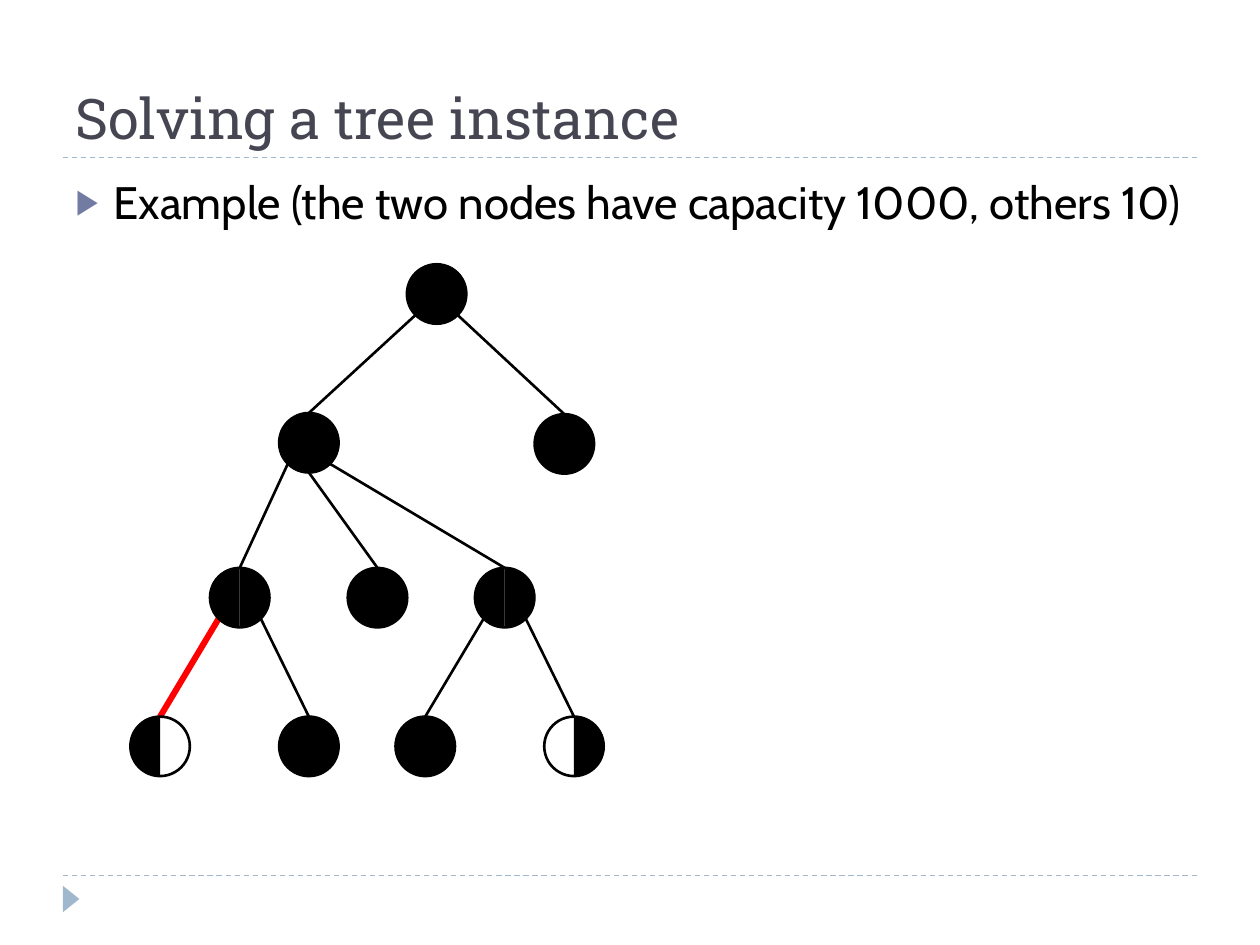
from math import sqrt

from lxml import etree
from pptx import Presentation
from pptx.dml.color import RGBColor
from pptx.enum.dml import MSO_LINE
from pptx.enum.shapes import MSO_CONNECTOR, MSO_SHAPE
from pptx.enum.text import MSO_ANCHOR, MSO_AUTO_SIZE, PP_ALIGN
from pptx.oxml.ns import qn
from pptx.util import Pt

BLACK = RGBColor(0x00, 0x00, 0x00)
RED = RGBColor(0xFF, 0x00, 0x00)
SLATE = RGBColor(0x46, 0x46, 0x53)
INDIGO = RGBColor(0x72, 0x7C, 0xA3)
PALE_BLUE = RGBColor(0x9F, 0xB8, 0xCD)

DIAMETER = 34
RADIUS = DIAMETER / 2
DIAGONAL = RADIUS / sqrt(2)

prs = Presentation()
prs.slide_width, prs.slide_height = Pt(720), Pt(540)
slide = prs.slides.add_slide(prs.slide_layouts[1])


def add_line(start, end, color, width):
    line = slide.shapes.add_connector(
        MSO_CONNECTOR.STRAIGHT, *[Pt(v) for v in (*start, *end)])
    line.line.color.rgb = color
    line.line.width = Pt(width)
    etree.SubElement(line._element.spPr, qn("a:effectLst"))
    return line


def add_solid(preset, left, top, width, height, fill=None, outline=0):
    solid = slide.shapes.add_shape(
        preset, *[Pt(v) for v in (left, top, width, height)])
    solid.shadow.inherit = False
    if fill is None:
        solid.fill.background()
    else:
        solid.fill.solid()
        solid.fill.fore_color.rgb = fill
    if outline:
        solid.line.color.rgb = BLACK
        solid.line.width = Pt(outline)
    else:
        solid.line.fill.background()
    return solid


for rule_y in (500.4, 90):
    add_line((36, rule_y), (684, rule_y), PALE_BLUE, 0.75).line.dash_style = MSO_LINE.DASH
add_solid(MSO_SHAPE.ISOSCELES_TRIANGLE, 33.1, 509, 15.1, 9.4, PALE_BLUE).rotation = 90

heading, example = slide.shapes.title, slide.placeholders[1]
texts = [
    (heading, "Solving a tree instance", (36, 12.2, 648, 77.8), MSO_ANCHOR.BOTTOM,
     {"name": "Roboto Slab", "size": Pt(32), "bold": False}, SLATE),
    (example, "Example (the two nodes have capacity 1000, others 10)",
     (36, 95.8, 648, 388.8), MSO_ANCHOR.TOP,
     {"name": "Cabin", "size": Pt(26), "bold": False}, BLACK),
]
for holder, wording, box, anchor, font_format, color in texts:
    for side, value in zip(("left", "top", "width", "height"), box):
        setattr(holder, side, Pt(value))
    frame = holder.text_frame
    frame.text = wording
    frame.auto_size = MSO_AUTO_SIZE.NONE
    frame.word_wrap = True
    frame.vertical_anchor = anchor
    frame.paragraphs[0].alignment = PP_ALIGN.LEFT
    font = frame.paragraphs[0].runs[0].font
    for attribute, value in font_format.items():
        setattr(font, attribute, value)
    font.color.rgb = color

bullet_line = example.text_frame.paragraphs[0]
bullet_line.space_before = Pt(6)
bullet_format = bullet_line._p.get_or_add_pPr()
bullet_format.set("marL", str(Pt(21.6)))
bullet_format.set("indent", str(-Pt(21.6)))
bullet_color = etree.SubElement(bullet_format, qn("a:buClr"))
etree.SubElement(bullet_color, qn("a:srgbClr")).set("val", str(INDIGO))
etree.SubElement(bullet_format, qn("a:buSzPct")).set("val", "76000")
etree.SubElement(bullet_format, qn("a:buFont")).set("typeface", "Arial")
etree.SubElement(bullet_format, qn("a:buChar")).set("char", "▶")

ROWS = (168, 253, 341.5, 426.5)
nodes = {
    "root": (249.5, ROWS[0], "full"),
    "hub": (176.5, ROWS[1], "left right"),
    "right": (322.5, ROWS[1] + 0.7, "full"),
    "hub left": (137, ROWS[2], "left right"),
    "hub middle": (215.7, ROWS[2], "full"),
    "hub right": (288.4, ROWS[2], "left right"),
    "leaf 1": (91.5, ROWS[3], "left"),
    "leaf 2": (176.5, ROWS[3], "full"),
    "leaf 3": (243, ROWS[3], "full"),
    "leaf 4": (328, ROWS[3], "right"),
}
children = {
    "root": {"left": "hub", "right": "right"},
    "hub": {"left": "hub left", "bottom": "hub middle", "right": "hub right"},
    "hub left": {"left": "leaf 1", "right": "leaf 2"},
    "hub right": {"left": "leaf 3", "right": "leaf 4"},
}
exits = {"left": (-DIAGONAL, DIAGONAL), "bottom": (0, RADIUS), "right": (DIAGONAL, DIAGONAL)}
half_angles = {"left": (54, 162), "right": (162, 54)}

for parent, branches in children.items():
    x, y, _ = nodes[parent]
    for exit_side, child in branches.items():
        dx, dy = exits[exit_side]
        child_x, child_y, _ = nodes[child]
        color, width = (RED, 3.5) if child == "leaf 1" else (BLACK, 1.5)
        add_line((x + dx, y + dy), (child_x, child_y - RADIUS), color, width)

for x, y, filling in nodes.values():
    box = (x - RADIUS, y - RADIUS, DIAMETER, DIAMETER)
    add_solid(MSO_SHAPE.OVAL, *box, BLACK if filling == "full" else None, 1.5)
    halves = [side for side in half_angles if side in filling.split()]
    for side in halves:
        half = add_solid(MSO_SHAPE.ARC, *box, BLACK, 0.75 if len(halves) == 2 else 0)
        half.adjustments[0], half.adjustments[1] = half_angles[side]

prs.save("out.pptx")
